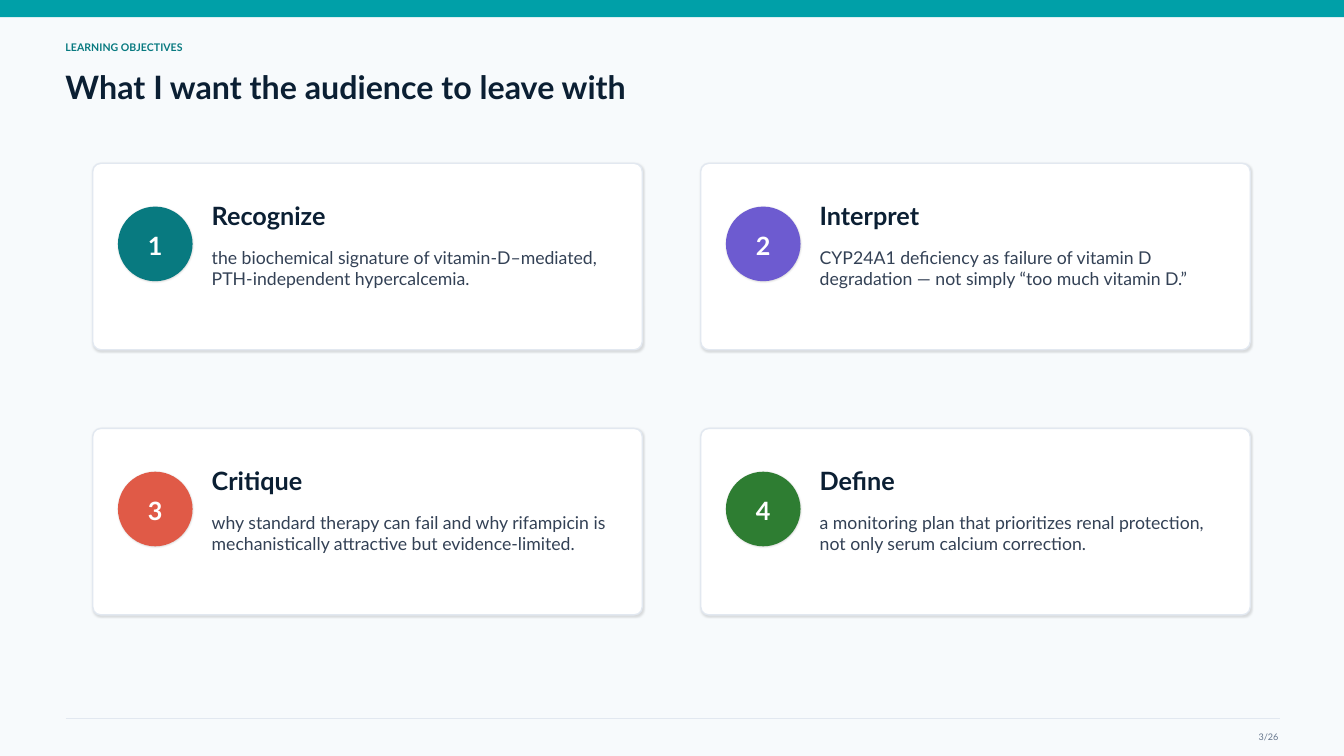
from dataclasses import dataclass

from lxml import etree
from pptx import Presentation
from pptx import util as u
from pptx.dml.color import RGBColor
from pptx.enum import shapes, text
from pptx.oxml import ns


@dataclass(frozen=True)
class Theme:
    """Colours, font and type sizes of the deck."""
    font: str = "Lato"
    background: str = "F7FAFC"
    bar: str = "00A0A8"
    teal: str = "087A80"
    violet: str = "6D5BD0"
    coral: str = "E05A47"
    green: str = "2E7D32"
    ink: str = "0B1F33"
    body: str = "334155"
    muted: str = "64748B"
    rule: str = "E2E8F0"
    white: str = "FFFFFF"
    shadow: str = "000000"
    title_size: float = 23
    heading_size: float = 18
    body_size: float = 12.6
    label_size: float = 7.5
    page_size: float = 6.5


THEME = Theme()
ALIGN = text.PP_ALIGN
SHAPE = shapes.MSO_SHAPE
WIDTH, HEIGHT = 13.33, 7.5
MARGIN = 0.65
OBJECTIVES = [
    ("Recognize", THEME.teal,
     "the biochemical signature of vitamin-D–mediated, PTH-independent hypercalcemia."),
    ("Interpret", THEME.violet,
     "CYP24A1 deficiency as failure of vitamin D degradation — not simply “too much vitamin D.”"),
    ("Critique", THEME.coral,
     "why standard therapy can fail and why rifampicin is mechanistically attractive "
     "but evidence-limited."),
    ("Define", THEME.green,
     "a monitoring plan that prioritizes renal protection, not only serum calcium correction."),
]


def rgb(value):
    """Return a hex string as a colour."""
    return RGBColor.from_string(value)


def add_text(s, box, words, size, color, bold=False, align=ALIGN.LEFT):
    """Add a one-run text box without insets, centred vertically."""
    tf = s.shapes.add_textbox(*map(u.Inches, box)).text_frame
    tf.word_wrap = True
    tf.vertical_anchor = text.MSO_ANCHOR.MIDDLE
    tf.margin_left = tf.margin_top = tf.margin_right = tf.margin_bottom = 0
    p = tf.paragraphs[0]
    p.alignment = align
    r = p.add_run()
    r.text = words
    r.font.name = THEME.font
    r.font.size = u.Pt(size)
    r.font.bold = bold
    r.font.color.rgb = rgb(color)


def add_panel(s, kind, box, fill, line=None):
    """Add a filled shape with an optional outline and no shadow."""
    sp = s.shapes.add_shape(kind, *map(u.Inches, box))
    sp.shadow.inherit = False
    sp.fill.solid()
    sp.fill.fore_color.rgb = rgb(fill)
    if line:
        sp.line.color.rgb = rgb(line)
        sp.line.width = u.Pt(1)
    else:
        sp.line.fill.background()
    return sp


def add_shadow(sp, blur, distance):
    """Give a shape a faint shadow towards the lower right."""
    effects = sp.element.spPr.find(ns.qn("a:effectLst"))
    outer = etree.SubElement(effects, ns.qn("a:outerShdw"), blurRad=str(u.Pt(blur)),
                             dist=str(u.Pt(distance)), dir="2700000",
                             algn="ctr", rotWithShape="0")
    color = etree.SubElement(outer, ns.qn("a:srgbClr"), val=THEME.shadow)
    etree.SubElement(color, ns.qn("a:alpha"), val="12000")


def add_header(s, left, top, width):
    """Add the top bar, section label and title."""
    add_panel(s, SHAPE.RECTANGLE, (left, top, width, 0.17), THEME.bar)
    add_text(s, (left + MARGIN, top + 0.34, 2.6, 0.25), "LEARNING OBJECTIVES",
             THEME.label_size, THEME.teal, bold=True)
    add_text(s, (left + MARGIN, top + 0.57, 10.8, 0.58),
             "What I want the audience to leave with",
             THEME.title_size, THEME.ink, bold=True)


def add_footer(s, left, top, width):
    """Add the rule and the page number below it."""
    right = left + width
    rule = s.shapes.add_connector(shapes.MSO_CONNECTOR.STRAIGHT,
                                  *map(u.Inches, (left, top, right, top)))
    rule.line.color.rgb = rgb(THEME.rule)
    rule.line.width = u.Pt(1)
    etree.SubElement(rule.element.spPr, ns.qn("a:effectLst"))
    add_text(s, (right - 0.62, top + 0.09, 0.6, 0.18), "3/26",
             THEME.page_size, THEME.muted, align=ALIGN.RIGHT)


def add_card(s, box, number, heading, color, words):
    """Add one objective card with its numbered badge."""
    left, top = box[:2]
    card = add_panel(s, SHAPE.ROUNDED_RECTANGLE, box, THEME.white, THEME.rule)
    card.adjustments[0] = 0.043
    add_shadow(card, 1.5, 0.7)
    badge = add_panel(s, SHAPE.OVAL, (left + 0.25, top + 0.43, 0.74, 0.74), color)
    add_shadow(badge, 1.2, 0.5)
    add_text(s, (left + 0.25, top + 0.65, 0.74, 0.32), str(number),
             THEME.heading_size, THEME.white, bold=True, align=ALIGN.CENTER)
    add_text(s, (left + 1.18, top + 0.37, 3.9, 0.3), heading,
             THEME.heading_size, THEME.ink, bold=True)
    add_text(s, (left + 1.18, top + 0.76, 3.95, 0.55), words,
             THEME.body_size, THEME.body)


def add_objectives(s, left, top, width, height):
    """Lay out the objective cards in two columns and two rows."""
    card_w, card_h = 5.45, 1.85
    for i, (heading, color, words) in enumerate(OBJECTIVES):
        row, col = divmod(i, 2)
        box = (left + col * (width - card_w), top + row * (height - card_h),
               card_w, card_h)
        add_card(s, box, i + 1, heading, color, words)


def main():
    """Build the slide and save it."""
    prs = Presentation()
    prs.slide_width, prs.slide_height = u.Inches(WIDTH), u.Inches(HEIGHT)
    s = prs.slides.add_slide(prs.slide_layouts[6])
    s.background.fill.solid()
    s.background.fill.fore_color.rgb = rgb(THEME.background)
    add_header(s, 0, 0, WIDTH)
    add_footer(s, MARGIN, 7.13, 12.05)
    add_objectives(s, 0.92, 1.62, 11.48, 4.48)
    prs.save("out.pptx")


if __name__ == "__main__":
    main()
